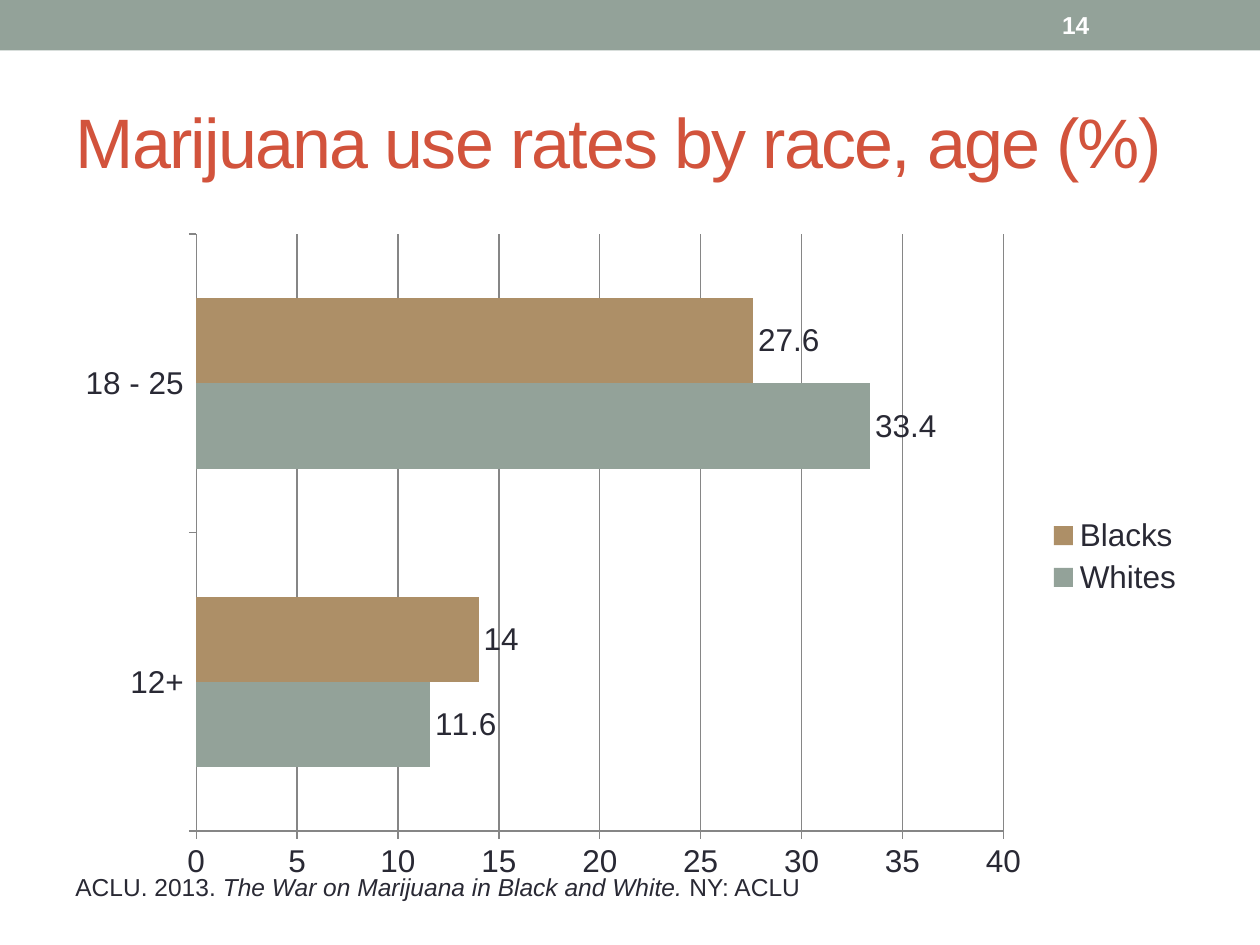
from pptx import Presentation
from pptx.chart.data import CategoryChartData
from pptx.dml.color import RGBColor
from pptx.enum.chart import XL_CHART_TYPE, XL_LABEL_POSITION, XL_LEGEND_POSITION, XL_TICK_MARK
from pptx.enum.shapes import MSO_SHAPE
from pptx.enum.text import MSO_ANCHOR, PP_ALIGN
from pptx.util import Cm, Pt

COLORS = {"sage": "93A299", "tan": "AD8F67", "red": "D2533C",
          "ink": "292934", "white": "FFFFFF", "grid": "868686"}
FONT = "Arial"
TITLE = "Marijuana use rates by race, age (%)"
PAGE_NUMBER = "14"
SOURCE = [("ACLU. 2013. ", False),
          ("The War on Marijuana in Black and White. ", True),
          ("NY: ACLU", False)]
AGES = ["12+", "18 - 25"]
RATES = [("Whites", (11.6, 33.4), "sage"), ("Blacks", (14, 27.6), "tan")]
WIDTH, HEIGHT, MARGIN = 25.4, 19.05, 1.27
CONTENT_WIDTH = WIDTH - 2 * MARGIN


def color(name):
    return RGBColor.from_string(COLORS[name])


def place(left, top, width, height):
    return [Cm(value) for value in (left, top, width, height)]


def write(box, spans, size, ink, bold=False, spacing=None):
    frame = box.text_frame
    frame.word_wrap = True
    frame.vertical_anchor = MSO_ANCHOR.MIDDLE
    para = frame.paragraphs[0]
    para.alignment = PP_ALIGN.LEFT
    for text, italic in spans:
        span = para.add_run()
        span.text = text
        font = span.font
        font.name, font.size, font.bold, font.italic = FONT, Pt(size), bold, italic
        font.color.rgb = color(ink)
        if spacing is not None:
            font._element.set("spc", str(spacing))


def add_rates_chart(page):
    data = CategoryChartData()
    data.categories = AGES
    for name, values, _ in RATES:
        data.add_series(name, values)
    chart = page.shapes.add_chart(XL_CHART_TYPE.BAR_CLUSTERED,
                                  *place(MARGIN, 4.45, CONTENT_WIDTH, 13.54), data).chart
    chart.has_title = False
    chart.font.name, chart.font.size = FONT, Pt(18)
    chart.font.color.rgb = color("ink")
    chart.has_legend = True
    chart.legend.position = XL_LEGEND_POSITION.RIGHT
    chart.legend.include_in_layout = False

    ages, rates = chart.category_axis, chart.value_axis
    rates.minimum_scale, rates.maximum_scale, rates.major_unit = 0, 40, 5
    rates.has_major_gridlines = True
    for axis in (ages, rates):
        axis.major_tick_mark = XL_TICK_MARK.OUTSIDE
    for line in (ages.format.line, rates.format.line, rates.major_gridlines.format.line):
        line.color.rgb = color("grid")
        line.width = Pt(0.75)

    plot = chart.plots[0]
    plot.gap_width = 150
    plot.vary_by_categories = False
    for series, (_, _, fill) in zip(plot.series, RATES):
        series.format.fill.solid()
        series.format.fill.fore_color.rgb = color(fill)
        series.data_labels.show_value = True
        series.data_labels.position = XL_LABEL_POSITION.OUTSIDE_END


def main():
    deck = Presentation()
    deck.slide_width, deck.slide_height = Cm(WIDTH), Cm(HEIGHT)
    page = deck.slides.add_slide(deck.slide_layouts[5])

    band = page.shapes.add_shape(MSO_SHAPE.RECTANGLE, *place(0, 0, WIDTH, 1.02))
    band.shadow.inherit = False
    band.fill.solid()
    band.fill.fore_color.rgb = color("sage")
    band.line.fill.background()

    title = page.shapes.title
    title.left, title.top, title.width, title.height = place(MARGIN, 1.47, CONTENT_WIDTH, 2.74)
    write(title, [(TITLE, False)], 40, "red", spacing=-100)

    add_rates_chart(page)

    number = page.shapes.add_textbox(*place(21.16, 0.05, 2.97, 0.91))
    write(number, [(PAGE_NUMBER, False)], 14, "white", bold=True)

    source = page.shapes.add_textbox(*place(MARGIN, 16.69, 20.75, 2.36))
    write(source, SOURCE, 14, "ink")

    deck.save("out.pptx")


if __name__ == "__main__":
    main()
